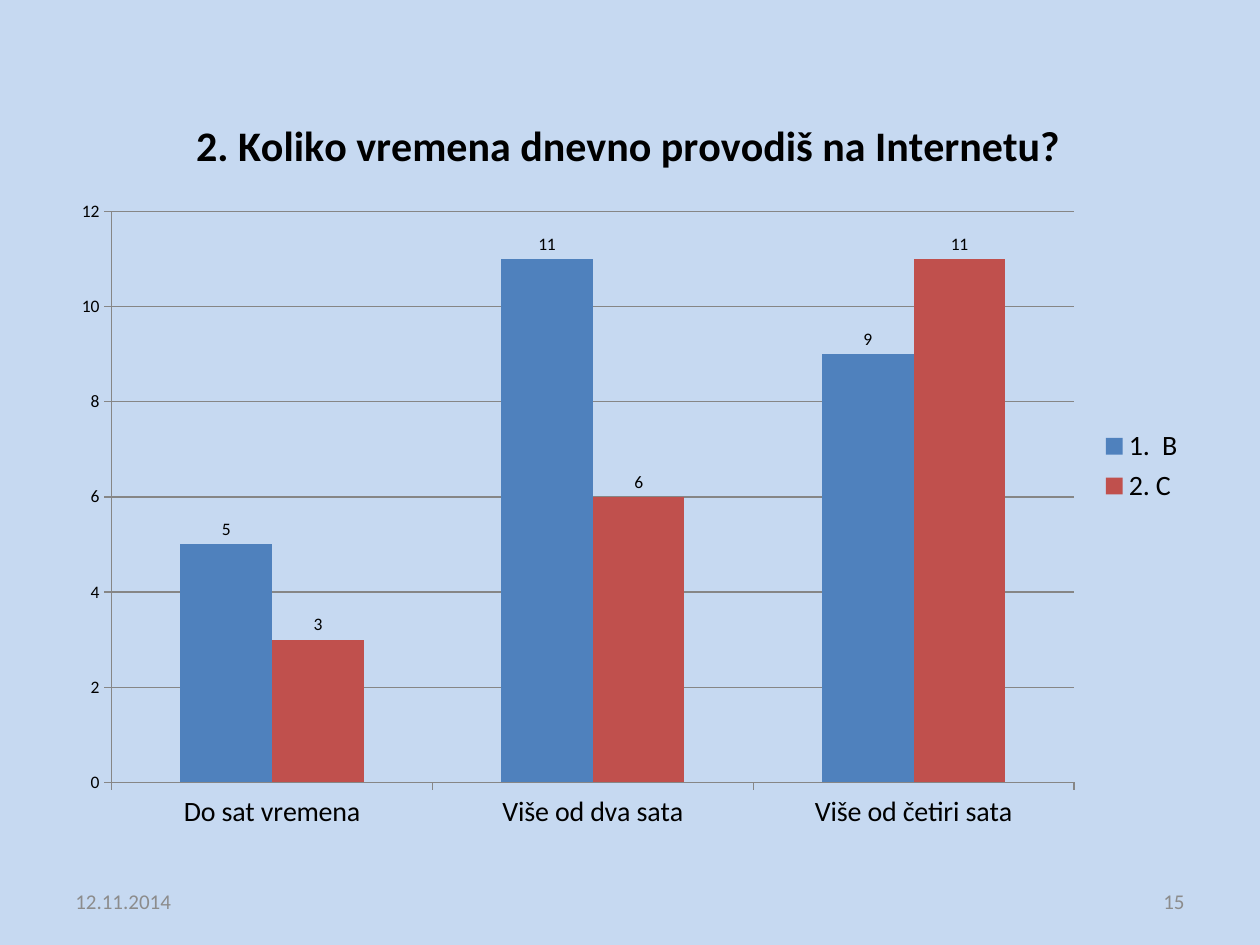
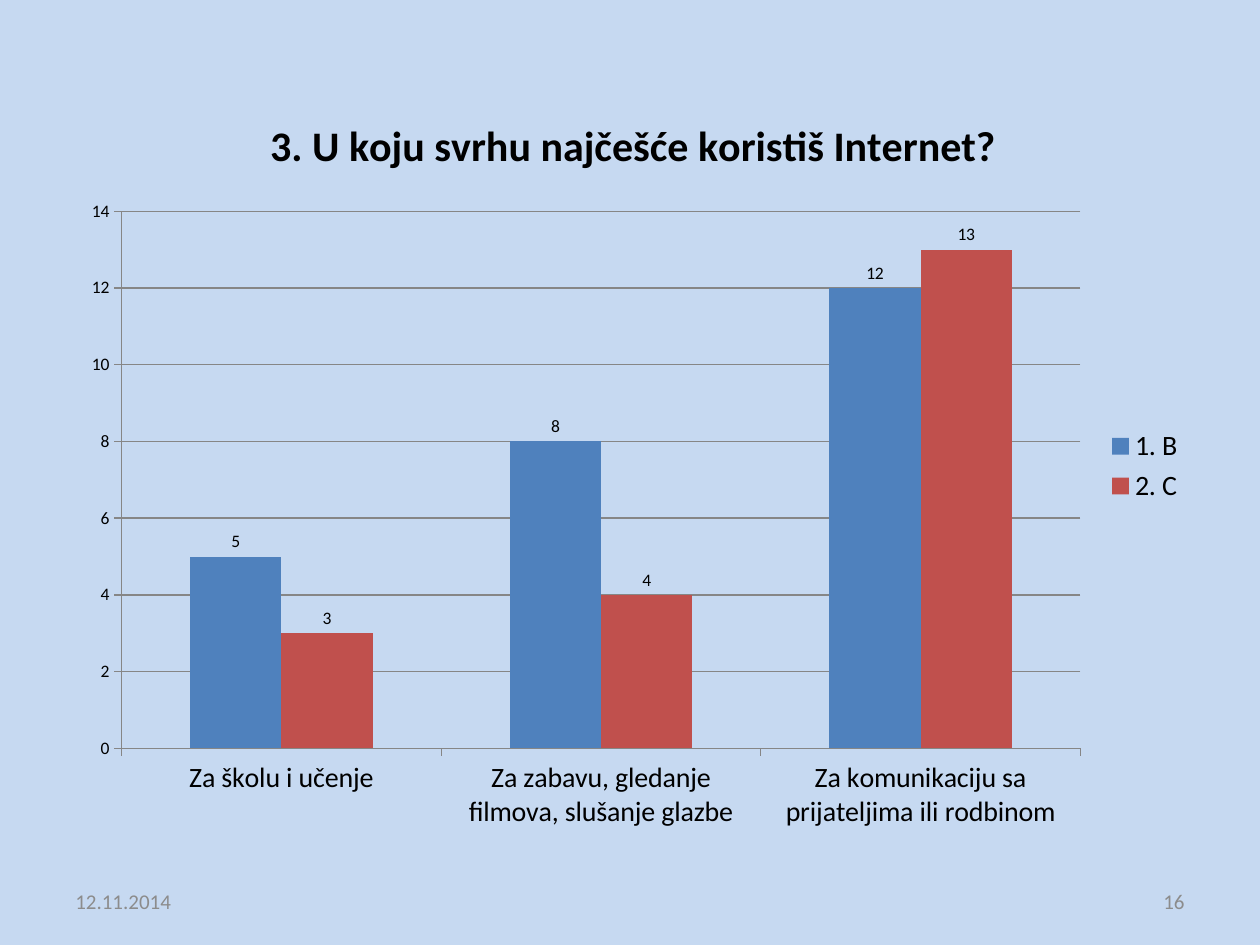
from pptx import Presentation
from pptx.chart.data import CategoryChartData as ChartData
from pptx.dml.color import RGBColor as RGB
from pptx.enum.chart import XL_CHART_TYPE as Kind
from pptx.enum.chart import XL_LABEL_POSITION as Place
from pptx.enum.chart import XL_LEGEND_POSITION as Side
from pptx.enum.chart import XL_TICK_MARK as Tick
from pptx.enum.text import MSO_ANCHOR as Anchor
from pptx.enum.text import PP_ALIGN as Align
from pptx.util import Inches, Pt

BACK, INK, GREY, RULE = "C6D9F1", "000000", "8C8C8C", "868686"
BARS = ["4F81BD", "C0504D"]
FACE = "Calibri"
DATE = "12.11.2014"
EDGE = 9.5
POLLS = [
    {
        "page": "15",
        "left": 0.47,
        "title": "2. Koliko vremena dnevno provodiš na Internetu?",
        "cats": ["Do sat vremena", "Više od dva sata", "Više od četiri sata"],
        "rows": {"1.  B": (5, 11, 9), "2. C": (3, 6, 11)},
    },
    {
        "page": "16",
        "left": 0.55,
        "title": "3. U koju svrhu najčešće koristiš Internet?",
        "cats": [
            "Za školu i učenje",
            "Za zabavu, gledanje filmova, slušanje glazbe",
            "Za komunikaciju sa prijateljima ili rodbinom",
        ],
        "rows": {"1. B": (5, 8, 12), "2. C": (3, 4, 13)},
    },
]


def apply(item, **values):
    """Set each given attribute on an object."""
    for name, value in values.items():
        setattr(item, name, value)


def paint(fill, tone):
    """Fill with one solid colour."""
    fill.solid()
    fill.fore_color.rgb = RGB.from_string(tone)


def style(font, size, tone=INK, bold=False):
    """Give a font the shared face, a size and a colour."""
    apply(font, name=FACE, size=Pt(size), bold=bold)
    font.color.rgb = RGB.from_string(tone)


def rule(line):
    """Draw a thin grey chart line."""
    line.width = Pt(0.75)
    line.color.rgb = RGB.from_string(RULE)


def add_note(slide, left, text, align):
    """Add one footer text."""
    box = slide.shapes.add_textbox(
        Inches(left), Inches(6.95), Inches(2.33), Inches(0.4))
    frame = box.text_frame
    apply(frame, word_wrap=True, vertical_anchor=Anchor.MIDDLE)
    para = frame.paragraphs[0]
    apply(para, text=text, alignment=align)
    style(para.runs[0].font, 12, GREY)


def add_title(chart, text):
    """Put a bold title above the plot."""
    para = chart.chart_title.text_frame.paragraphs[0]
    para.text = text
    style(para.runs[0].font, 24, bold=True)


def add_bars(slide, poll):
    """Add the column chart of one survey question."""
    data = ChartData()
    data.categories = poll["cats"]
    for name, votes in poll["rows"].items():
        data.add_series(name, votes)
    left = poll["left"]
    chart = slide.shapes.add_chart(
        Kind.COLUMN_CLUSTERED, Inches(left), Inches(0.7),
        Inches(EDGE - left), Inches(6), data).chart
    style(chart.font, 10)
    add_title(chart, poll["title"])

    chart.has_legend = True
    apply(chart.legend, position=Side.RIGHT, include_in_layout=False)
    style(chart.legend.font, 16)

    for axis, size in ((chart.category_axis, 16), (chart.value_axis, 10)):
        apply(axis, major_tick_mark=Tick.OUTSIDE, minor_tick_mark=Tick.NONE)
        style(axis.tick_labels.font, size)
        rule(axis.format.line)
    chart.value_axis.has_major_gridlines = True
    rule(chart.value_axis.major_gridlines.format.line)

    plot = chart.plots[0]
    apply(plot, gap_width=150, overlap=0, vary_by_categories=False,
          has_data_labels=True)
    apply(plot.data_labels, show_value=True, position=Place.OUTSIDE_END)
    style(plot.data_labels.font, 10)
    for series, tone in zip(plot.series, BARS):
        paint(series.format.fill, tone)


def add_poll(deck, poll):
    """Add a slide with one chart and its footer."""
    slide = deck.slides.add_slide(deck.slide_layouts[6])
    paint(slide.background.fill, BACK)
    add_bars(slide, poll)
    add_note(slide, 0.5, DATE, Align.LEFT)
    add_note(slide, 7.17, poll["page"], Align.RIGHT)


def main():
    """Build and save the deck."""
    deck = Presentation()
    apply(deck, slide_width=Inches(10), slide_height=Inches(7.5))
    for poll in POLLS:
        add_poll(deck, poll)
    deck.save("out.pptx")


if __name__ == "__main__":
    main()
